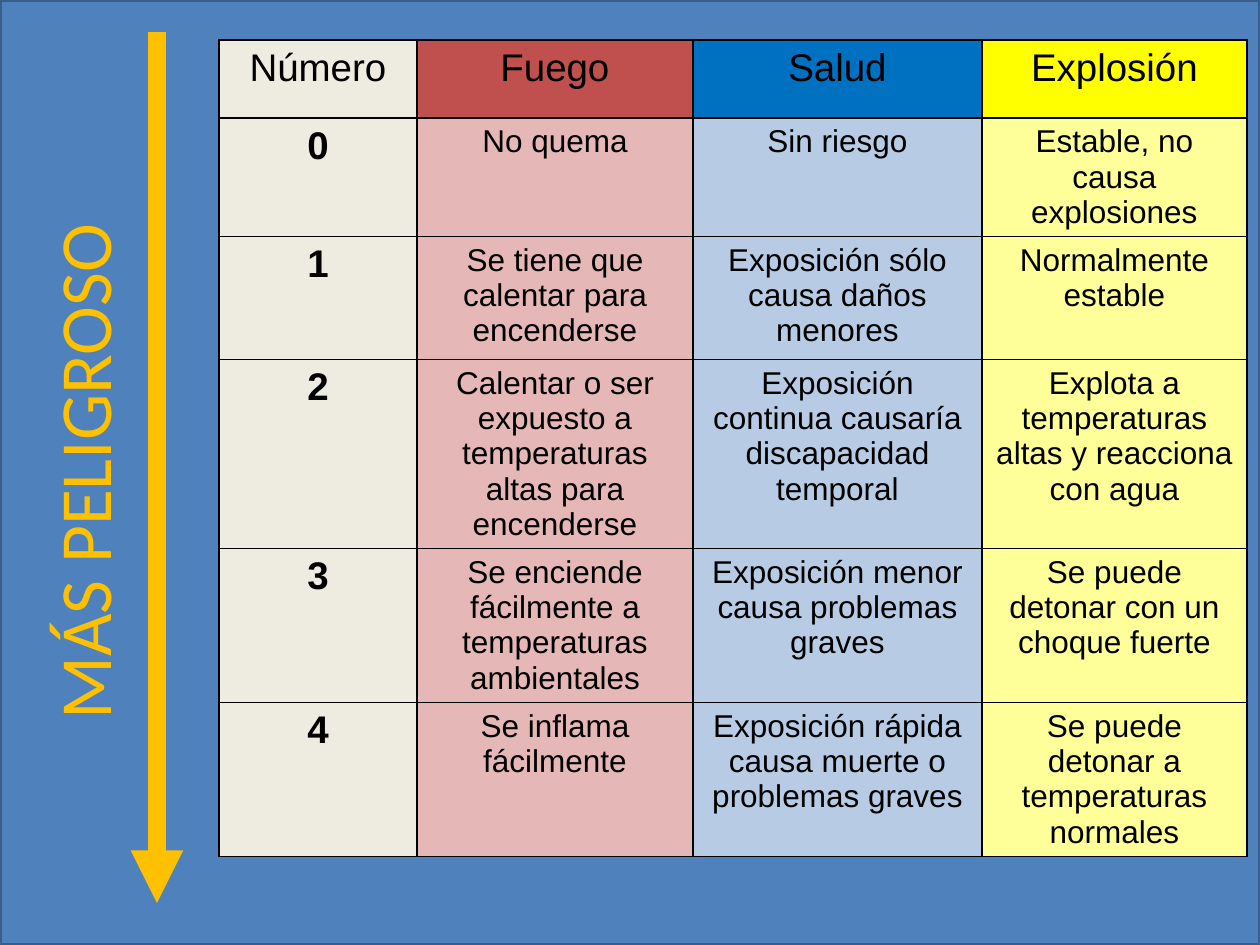
"""Build a slide with a hazard rating table and a danger arrow."""
from lxml import etree
from pptx import Presentation
from pptx.dml.color import RGBColor
from pptx.enum.shapes import MSO_CONNECTOR, MSO_SHAPE
from pptx.enum.text import PP_ALIGN
from pptx.oxml.ns import qn
from pptx.util import Emu, Pt

STRAIGHT = MSO_CONNECTOR.STRAIGHT
RECTANGLE = MSO_SHAPE.RECTANGLE
CENTER = PP_ALIGN.CENTER
SLIDE_WIDTH, SLIDE_HEIGHT = 1260, 945
AMBER = "FFC000"
HEADER_FILLS = ["EEECE1", "C0504D", "0070C0", "FFFF00"]
BODY_FILLS = ["EEECE1", "E5B8B7", "B7CCE4", "FFFF99"]
COLUMN_WIDTHS = [198, 276, 289, 265]
ROW_HEIGHTS = [78, 118, 123, 189, 154, 154]
RATINGS = [
    ["Número", "Fuego", "Salud", "Explosión"],
    ["0", "No quema", "Sin riesgo", "Estable, no causa explosiones"],
    ["1", "Se tiene que calentar para encenderse",
     "Exposición sólo causa daños menores", "Normalmente estable"],
    ["2", "Calentar o ser expuesto a temperaturas altas para encenderse",
     "Exposición continua causaría discapacidad temporal",
     "Explota a temperaturas altas y reacciona con agua"],
    ["3", "Se enciende fácilmente a temperaturas ambientales",
     "Exposición menor causa problemas graves",
     "Se puede detonar con un choque fuerte"],
    ["4", "Se inflama fácilmente",
     "Exposición rápida causa muerte o problemas graves",
     "Se puede detonar a temperaturas normales"],
]


def px(length):
    return Emu(round(length * 914400 / 126))


def color(value):
    return RGBColor.from_string(value)


presentation = Presentation()
presentation.slide_width = px(SLIDE_WIDTH)
presentation.slide_height = px(SLIDE_HEIGHT)
slide = presentation.slides.add_slide(presentation.slide_layouts[6])

backdrop = slide.shapes.add_shape(RECTANGLE, 0, 0, px(SLIDE_WIDTH), px(SLIDE_HEIGHT))
backdrop.shadow.inherit = False
backdrop.fill.solid()
backdrop.fill.fore_color.rgb = color("4F81BD")
backdrop.line.color.rgb = color("395E89")
backdrop.line.width = Pt(2)

table = slide.shapes.add_table(
    len(ROW_HEIGHTS), len(COLUMN_WIDTHS), px(219), px(40),
    px(sum(COLUMN_WIDTHS)), px(sum(ROW_HEIGHTS))).table
table.first_row = False
table.horz_banding = False
for column, width in zip(table.columns, COLUMN_WIDTHS):
    column.width = px(width)
for row, height in zip(table.rows, ROW_HEIGHTS):
    row.height = px(height)

for row_index, texts in enumerate(RATINGS):
    fills = BODY_FILLS if row_index else HEADER_FILLS
    for column_index, text in enumerate(texts):
        cell = table.cell(row_index, column_index)
        cell.text_frame.text = text
        paragraph = cell.text_frame.paragraphs[0]
        paragraph.alignment = CENTER
        font = paragraph.runs[0].font
        font.name = "Arial"
        font.size = Pt(18 if row_index and column_index else 22)
        font.bold = row_index > 0 and column_index == 0
        font.color.rgb = color("000000")
        properties = cell._tc.get_or_add_tcPr()
        for side in ("a:lnL", "a:lnR", "a:lnT", "a:lnB"):
            border = etree.SubElement(properties, qn(side), w=str(Pt(1)))
            border_fill = etree.SubElement(border, qn("a:solidFill"))
            etree.SubElement(border_fill, qn("a:srgbClr"), val="000000")
        cell.fill.solid()
        cell.fill.fore_color.rgb = color(fills[column_index])

danger_arrow = slide.shapes.add_connector(STRAIGHT, px(157), px(32), px(157), px(903))
danger_arrow.line.color.rgb = color(AMBER)
danger_arrow.line.width = Pt(10)
etree.SubElement(danger_arrow.line._get_or_add_ln(), qn("a:tailEnd"), type="triangle")
etree.SubElement(danger_arrow._element.spPr, qn("a:effectLst"))

danger_label = slide.shapes.add_textbox(px(-215), px(383), px(596), px(102))
danger_label.rotation = 270
danger_label.text_frame.word_wrap = True
danger_label.text_frame.text = "MÁS PELIGROSO"
label_font = danger_label.text_frame.paragraphs[0].runs[0].font
label_font.name = "Calibri"
label_font.size = Pt(42)
label_font.color.rgb = color(AMBER)

presentation.save("out.pptx")
